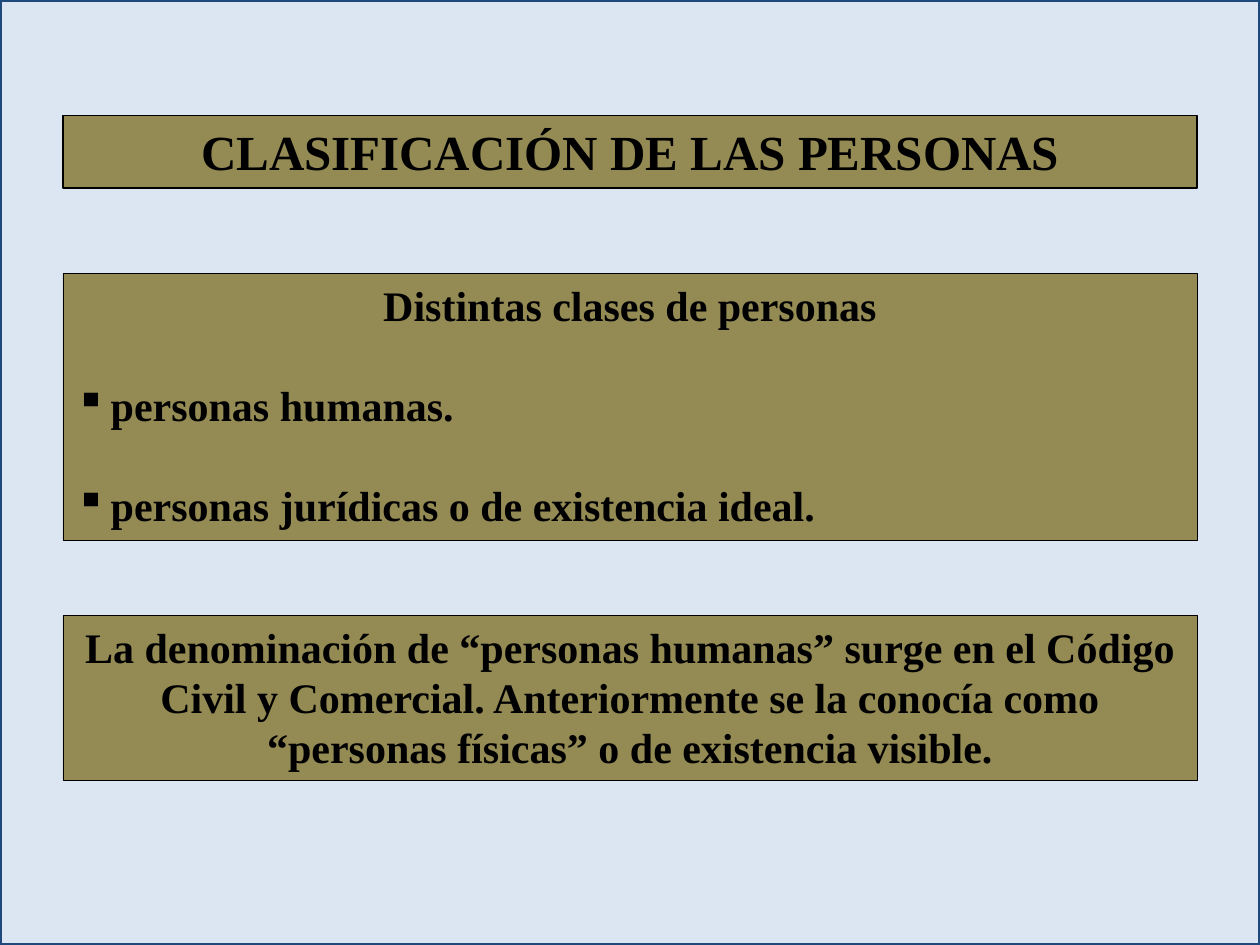
from lxml import etree
from pptx import Presentation
from pptx import util as u
from pptx.dml.color import RGBColor
from pptx.enum import shapes, text
from pptx.oxml import ns

PALE_BLUE = RGBColor(0xDC, 0xE6, 0xF2)
NAVY = RGBColor(0x1F, 0x49, 0x7D)
OLIVE = RGBColor(0x94, 0x8A, 0x54)
BLACK = RGBColor(0, 0, 0)

LEFT, WIDTH = 36, 648
LINE_FACTOR = 1.19
BULLET_INDENT = 20.2

presentation = Presentation()
presentation.slide_width, presentation.slide_height = u.Pt(720), u.Pt(540)
slide = presentation.slides.add_slide(presentation.slide_layouts[6])


def add_panel(left, top, width, height, fill, line, line_width):
    lengths = [u.Pt(value) for value in (left, top, width, height)]
    shape = slide.shapes.add_shape(shapes.MSO_SHAPE.RECTANGLE, *lengths)
    shape.shadow.inherit = False
    shape.fill.solid()
    shape.fill.fore_color.rgb = fill
    shape.line.color.rgb = line
    shape.line.width = u.Pt(line_width)
    return shape


def add_bullet(paragraph):
    properties = paragraph._p.get_or_add_pPr()
    properties.set("marL", str(u.Pt(BULLET_INDENT)))
    properties.set("indent", str(-u.Pt(BULLET_INDENT)))
    etree.SubElement(properties, ns.qn("a:buChar")).set("char", "▪")


# Framed backdrop
add_panel(0, 0, 720, 540, PALE_BLUE, NAVY, 2)

# Panels: top, height, line width, text size, centred text, bullets
panels = [
    (66, 41.4, 0.75, 28, "CLASIFICACIÓN DE LAS PERSONAS", []),
    (156.2, 152.8, 0.25, 24, "Distintas clases de personas",
     ["personas humanas.", "personas jurídicas o de existencia ideal."]),
    (351.6, 94.4, 0.25, 24,
     "La denominación de “personas humanas” surge en el Código Civil y "
     "Comercial. Anteriormente se la conocía como “personas físicas” o de "
     "existencia visible.", []),
]

for top, height, line_width, size, heading, bullets in panels:
    shape = add_panel(LEFT, top, WIDTH, height, OLIVE, BLACK, line_width)
    frame = shape.text_frame
    frame_format = {
        "word_wrap": True,
        "auto_size": text.MSO_AUTO_SIZE.NONE,
        "vertical_anchor": text.MSO_ANCHOR.TOP,
    }
    for name, value in frame_format.items():
        setattr(frame, name, value)

    line_height = u.Pt(round(size * LINE_FACTOR, 1))
    font_format = {"name": "Times New Roman", "size": u.Pt(size), "bold": True}
    for index, wording in enumerate([heading] + bullets):
        paragraph = frame.add_paragraph() if index else frame.paragraphs[0]
        paragraph.text = wording
        paragraph.line_spacing = line_height
        paragraph.alignment = text.PP_ALIGN.CENTER
        # Bullets stand one line apart
        if index:
            paragraph.alignment = text.PP_ALIGN.LEFT
            paragraph.space_before = line_height
            add_bullet(paragraph)
        for name, value in font_format.items():
            setattr(paragraph.font, name, value)
        paragraph.font.color.rgb = BLACK

presentation.save("out.pptx")
